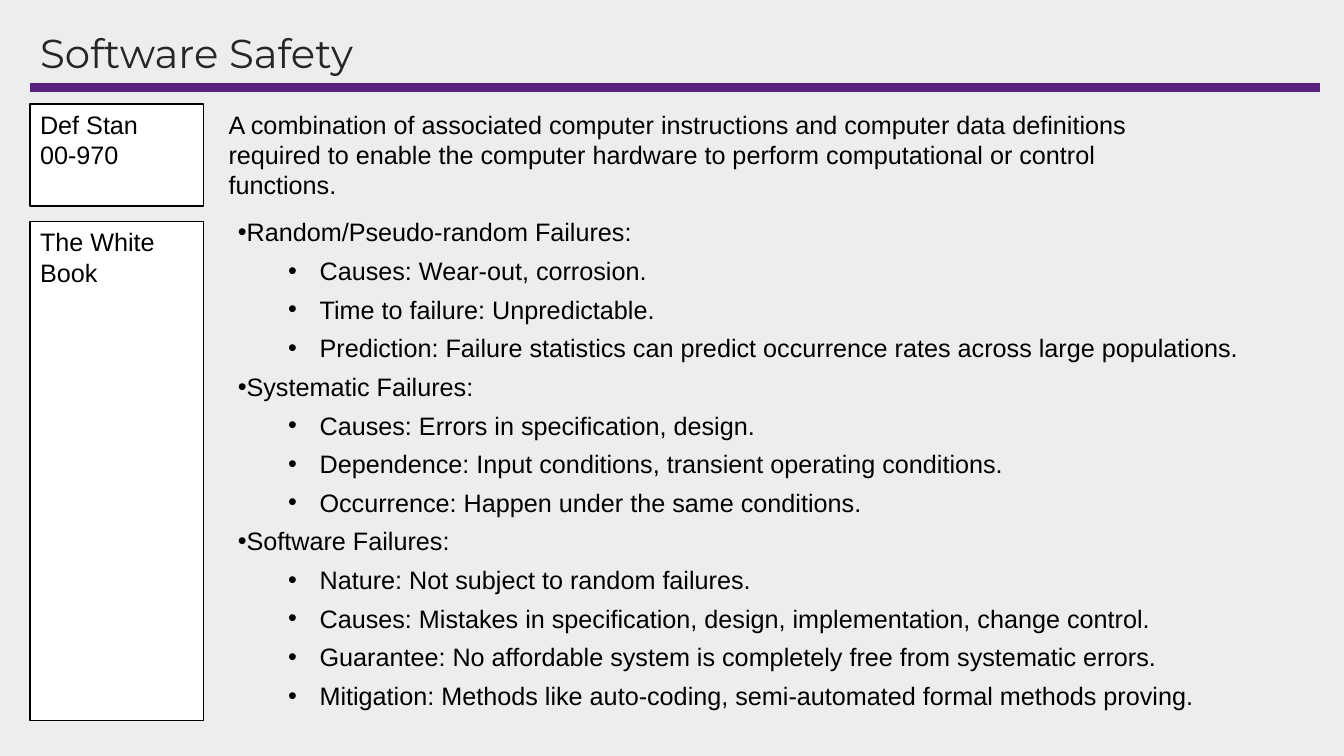
from lxml import etree
from pptx import Presentation
from pptx.dml.color import RGBColor
from pptx.enum.shapes import MSO_CONNECTOR, MSO_SHAPE
from pptx.enum.text import MSO_ANCHOR, MSO_AUTO_SIZE, PP_ALIGN
from pptx.oxml.ns import qn
from pptx.util import Cm, Pt

STRAIGHT = MSO_CONNECTOR.STRAIGHT
RECTANGLE = MSO_SHAPE.RECTANGLE
TOP, MIDDLE = MSO_ANCHOR.TOP, MSO_ANCHOR.MIDDLE
LEFT = PP_ALIGN.LEFT
NO_AUTOFIT = MSO_AUTO_SIZE.NONE

# Content
TITLE = "Software Safety"
DEFINITION = (
    "A combination of associated computer instructions and computer data "
    "definitions required to enable the computer hardware to perform "
    "computational or control functions."
)
FAILURES = {
    "Random/Pseudo-random Failures:": [
        "Causes: Wear-out, corrosion.",
        "Time to failure: Unpredictable.",
        "Prediction: Failure statistics can predict occurrence rates across large populations.",
    ],
    "Systematic Failures:": [
        "Causes: Errors in specification, design.",
        "Dependence: Input conditions, transient operating conditions.",
        "Occurrence: Happen under the same conditions.",
    ],
    "Software Failures:": [
        "Nature: Not subject to random failures.",
        "Causes: Mistakes in specification, design, implementation, change control.",
        "Guarantee: No affordable system is completely free from systematic errors.",
        "Mitigation: Methods like auto-coding, semi-automated formal methods proving.",
    ],
}

# Layout in centimetres
MARGIN = 0.76
RULE_Y, RULE_WIDTH = 2.21, 32.51
SOURCE_WIDTH = 4.37
DEFINITION_TOP, DEFINITION_HEIGHT = 2.62, 2.57
# Source label lines, top, height
SOURCES = [
    (["Def Stan", "00-970"], DEFINITION_TOP, DEFINITION_HEIGHT),
    (["The White Book"], 5.59, 12.57),
]

# Formats
BODY_FONT = {"name": "Arial", "size": Pt(18), "color": "000000"}
TITLE_FONT = {"name": "Montserrat", "size": Pt(28.8), "color": "262626"}
PLAIN = {"alignment": LEFT, "space_before": Pt(0), "space_after": Pt(0), "line_spacing": 1.0}
LISTED = {**PLAIN, "space_after": Pt(6)}
# Left margin and first-line indent of each list level
INDENTS = [(0, 0), (2.06, -0.79)]


def color(value):
    return RGBColor.from_string(value)


def place(shape, left, top, width, height):
    box = {"left": left, "top": top, "width": width, "height": height}
    for name, value in box.items():
        setattr(shape, name, Cm(value))


def add_bullet(paragraph, level):
    margin, indent = INDENTS[level]
    paragraph.level = level
    properties = paragraph._p.get_or_add_pPr()
    properties.set("marL", str(Cm(margin)))
    properties.set("indent", str(Cm(indent)))
    etree.SubElement(properties, qn("a:buFont"), typeface="Arial")
    etree.SubElement(properties, qn("a:buChar"), char="•")


def write(shape, lines, font=BODY_FONT, spacing=PLAIN, anchor=TOP, bulleted=False):
    """Fill a shape with (level, text) lines."""
    frame = shape.text_frame
    frame.auto_size = NO_AUTOFIT
    frame.word_wrap = True
    frame.vertical_anchor = anchor
    for index, (level, text) in enumerate(lines):
        paragraph = frame.add_paragraph() if index else frame.paragraphs[0]
        for name, value in spacing.items():
            setattr(paragraph, name, value)
        if bulleted:
            add_bullet(paragraph, level)
        run = paragraph.add_run()
        run.text = text
        for name, value in font.items():
            if name == "color":
                run.font.color.rgb = color(value)
            else:
                setattr(run.font, name, value)


def main():
    presentation = Presentation()
    presentation.slide_width, presentation.slide_height = Cm(33.87), Cm(19.05)
    slide = presentation.slides.add_slide(presentation.slide_layouts[1])
    slide.background.fill.solid()
    slide.background.fill.fore_color.rgb = color("EDEDED")

    # Title and the rule below it
    title = slide.shapes.title
    place(title, MARGIN, 0.71, RULE_WIDTH, 1.35)
    write(title, [(0, TITLE)], TITLE_FONT, {**PLAIN, "line_spacing": 0.9}, MIDDLE)
    rule = slide.shapes.add_connector(
        STRAIGHT, Cm(MARGIN), Cm(RULE_Y), Cm(MARGIN + RULE_WIDTH), Cm(RULE_Y)
    )
    rule.line.color.rgb = color("56227D")
    rule.line.width = Pt(6)
    etree.SubElement(rule._element.spPr, qn("a:effectLst"))

    # Source boxes on the left
    for lines, top, height in SOURCES:
        source = slide.shapes.add_shape(
            RECTANGLE, Cm(MARGIN), Cm(top), Cm(SOURCE_WIDTH), Cm(height)
        )
        source.shadow.inherit = False
        source.fill.solid()
        source.fill.fore_color.rgb = color("FFFFFF")
        source.line.color.rgb = color("000000")
        source.line.width = Pt(1)
        write(source, [(0, line) for line in lines])

    # Definition
    definition = slide.shapes.add_textbox(
        Cm(5.51), Cm(DEFINITION_TOP), Cm(24.79), Cm(DEFINITION_HEIGHT)
    )
    write(definition, [(0, DEFINITION)])

    # Failure list
    failures = slide.placeholders[1]
    place(failures, 5.74, 5.33, 26.54, 12.83)
    lines = []
    for heading, points in FAILURES.items():
        lines += [(0, heading)] + [(1, point) for point in points]
    write(failures, lines, spacing=LISTED, bulleted=True)

    presentation.save("out.pptx")


if __name__ == "__main__":
    main()
